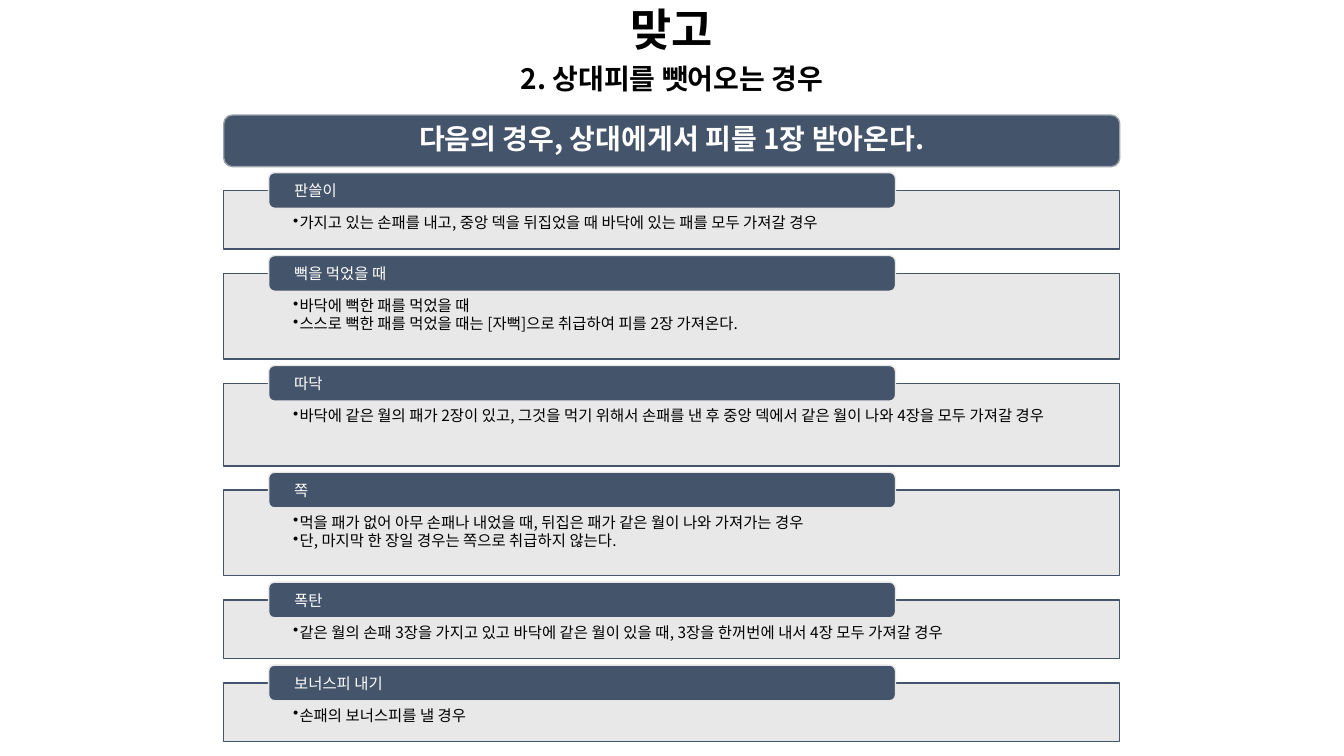
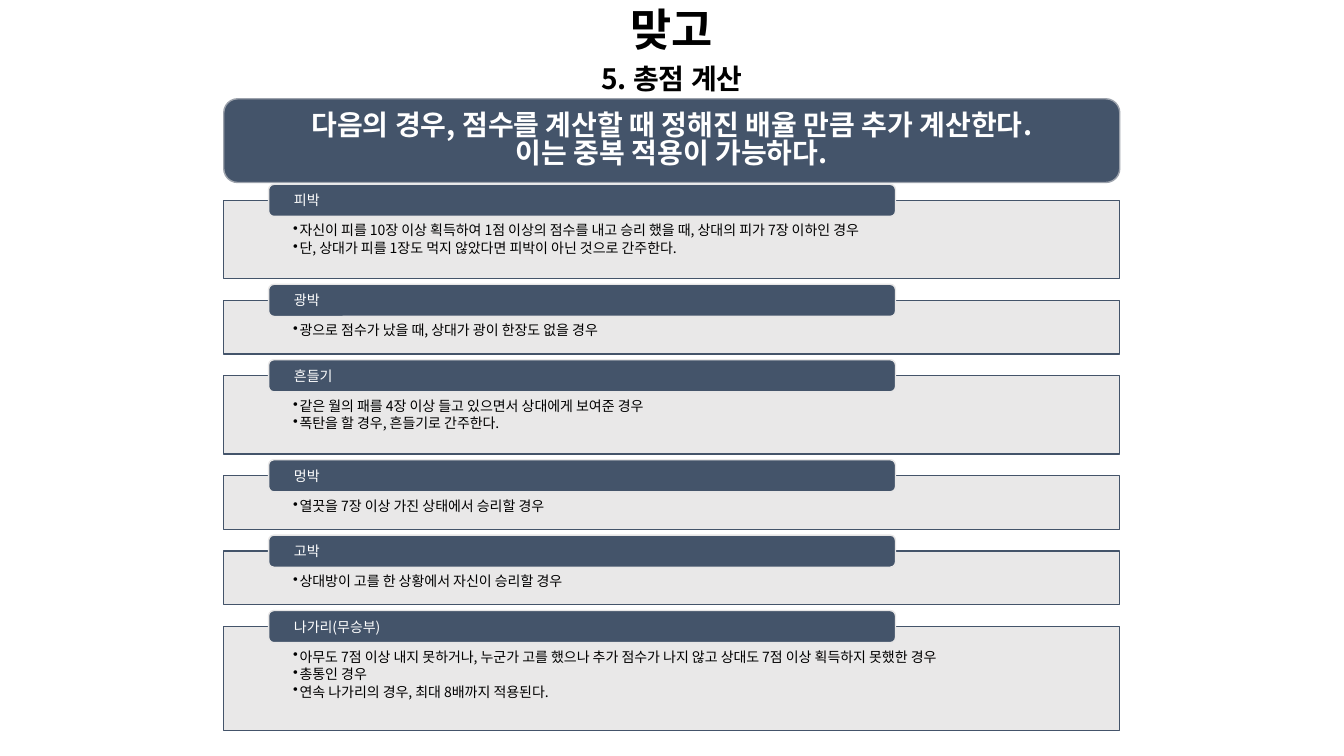
from dataclasses import dataclass

from lxml import etree
from pptx import Presentation
from pptx import util as u
from pptx.dml.color import RGBColor
from pptx.enum import shapes, text
from pptx.oxml.ns import qn


@dataclass(frozen=True)
class Theme:
    font: str = "Noto Sans CJK KR"
    ink: str = "000000"
    white: str = "FFFFFF"
    navy: str = "44546A"
    gray: str = "E7E6E6"
    edge: str = "9CA2AC"
    title: int = 32
    head: int = 20
    wide: float = 33.87
    high: float = 19.05
    left: float = 5.64
    span: float = 22.58
    tab_left: float = 6.77
    tab_span: float = 15.8


T = Theme()
RECT = shapes.MSO_SHAPE.RECTANGLE
ROUND = shapes.MSO_SHAPE.ROUNDED_RECTANGLE

SLIDES = [
    dict(
        sub="2. 상대피를 뺏어오는 경우",
        note=["다음의 경우, 상대에게서 피를 1장 받아온다."],
        note_box=(2.9, 1.3),
        top=4.8, gap=0.61, tab=0.9, size=11, lead=12, after=1, inset=0.62,
        rules=[
            ("판쓸이", 1.48, ["가지고 있는 손패를 내고, 중앙 덱을 뒤집었을 때 바닥에 있는 패를 모두 가져갈 경우"]),
            ("뻑을 먹었을 때", 2.16, [
                "바닥에 뻑한 패를 먹었을 때",
                "스스로 뻑한 패를 먹었을 때는 [자뻑]으로 취급하여 피를 2장 가져온다."]),
            ("따닥", 2.08, [
                "바닥에 같은 월의 패가 2장이 있고, 그것을 먹기 위해서 손패를 낸 후 "
                "중앙 덱에서 같은 월이 나와 4장을 모두 가져갈 경우"]),
            ("쪽", 2.16, [
                "먹을 패가 없어 아무 손패나 내었을 때, 뒤집은 패가 같은 월이 나와 가져가는 경우",
                "단, 마지막 한 장일 경우는 쪽으로 취급하지 않는다."]),
            ("폭탄", 1.48, [
                "같은 월의 손패 3장을 가지고 있고 바닥에 같은 월이 있을 때, "
                "3장을 한꺼번에 내서 4장 모두 가져갈 경우"]),
            ("보너스피 내기", 1.48, ["손패의 보너스피를 낼 경우"]),
        ],
    ),
    dict(
        sub="5. 총점 계산",
        note=["다음의 경우, 점수를 계산할 때 정해진 배율 만큼 추가 계산한다.",
              "이는 중복 적용이 가능하다."],
        note_box=(2.49, 2.11),
        top=5.05, gap=0.55, tab=0.81, size=10, lead=11, after=1.5, inset=0.58,
        rules=[
            ("피박", 1.97, [
                "자신이 피를 10장 이상 획득하여 1점 이상의 점수를 내고 승리 했을 때, "
                "상대의 피가 7장 이하인 경우",
                "단, 상대가 피를 1장도 먹지 않았다면 피박이 아닌 것으로 간주한다."]),
            ("광박", 1.35, ["광으로 점수가 났을 때, 상대가 광이 한장도 없을 경우"]),
            ("흔들기", 1.97, [
                "같은 월의 패를 4장 이상 들고 있으면서 상대에게 보여준 경우",
                "폭탄을 할 경우, 흔들기로 간주한다."]),
            ("멍박", 1.35, ["열끗을 7장 이상 가진 상태에서 승리할 경우"]),
            ("고박", 1.35, ["상대방이 고를 한 상황에서 자신이 승리할 경우"]),
            ("나가리(무승부)", 2.62, [
                "아무도 7점 이상 내지 못하거나, 누군가 고를 했으나 추가 점수가 나지 않고 "
                "상대도 7점 이상 획득하지 못했한 경우",
                "총통인 경우",
                "연속 나가리의 경우, 최대 8배까지 적용된다."]),
        ],
    ),
]


def rgb(tint):
    return RGBColor.from_string(tint)


def mark(para, bullet):
    props = para._p.get_or_add_pPr()
    dent = u.Cm(0.16) if bullet else 0
    props.set("marL", str(dent))
    props.set("indent", str(-dent))
    if bullet:
        etree.SubElement(props, qn("a:buChar"), char="•")
    else:
        etree.SubElement(props, qn("a:buNone"))


def write(shape, lines, size, color=T.ink, bold=False, align="LEFT", anchor="MIDDLE",
          inset=(0, 0, 0, 0), lead=None, after=0, bullet=False):
    frame = shape.text_frame
    frame.word_wrap = True
    frame.auto_size = text.MSO_AUTO_SIZE.NONE
    frame.vertical_anchor = text.MSO_ANCHOR[anchor]
    (frame.margin_left, frame.margin_top,
     frame.margin_right, frame.margin_bottom) = map(u.Cm, inset)
    for i, line in enumerate(lines):
        para = frame.paragraphs[0] if i == 0 else frame.add_paragraph()
        para.alignment = text.PP_ALIGN[align]
        para.space_before = u.Pt(0)
        para.space_after = u.Pt(after)
        if lead:
            para.line_spacing = lead
        mark(para, bullet)
        run = para.add_run()
        run.text = line
        font = run.font
        font.name, font.size, font.bold = T.font, u.Pt(size), bold
        font.color.rgb = rgb(color)
        etree.SubElement(run._r.get_or_add_rPr(), qn("a:ea"), typeface=T.font)


def place(shape, left, top, wide, high):
    shape.left, shape.top = u.Cm(left), u.Cm(top)
    shape.width, shape.height = u.Cm(wide), u.Cm(high)


def box(slide, kind, area, fill, line, alpha=None):
    shape = slide.shapes.add_shape(kind, *map(u.Cm, area))
    shape.shadow.inherit = False
    shape.fill.solid()
    shape.fill.fore_color.rgb = rgb(fill)
    shape.line.color.rgb = rgb(line)
    shape.line.width = u.Pt(1)
    if alpha:
        tint = shape._element.spPr.find(qn("a:solidFill"))[0]
        etree.SubElement(tint, qn("a:alpha"), val=str(alpha * 1000))
    return shape


def heads(slide, sub):
    title, body = slide.shapes.title, slide.placeholders[1]
    place(title, 0, 0, T.wide, 1.45)
    place(body, 0, 1.45, T.wide, 1.04)
    write(title, ["맞고"], T.title, bold=True, align="CENTER")
    write(body, [sub], T.head, bold=True, align="CENTER")


def rule(slide, page, top, name, high, lines):
    panel = box(slide, RECT, (T.left, top, T.span, high), T.gray, T.navy, alpha=90)
    write(panel, lines, page["size"], anchor="TOP", bullet=True,
          inset=(1.75, page["inset"], 1.7, 0.2),
          lead=u.Pt(page["lead"]), after=page["after"])
    tab = box(slide, ROUND, (T.tab_left, top - page["tab"] / 2, T.tab_span, page["tab"]),
              T.navy, T.gray)
    write(tab, [name], page["size"], color=T.white, inset=(0.6, 0, 0.6, 0))


def build(slide, page):
    heads(slide, page["sub"])
    top = page["top"]
    for name, high, lines in page["rules"]:
        rule(slide, page, top, name, high, lines)
        top += high + page["gap"]
    y, high = page["note_box"]
    note = box(slide, ROUND, (T.left, y, T.span, high), T.navy, T.edge)
    write(note, page["note"], T.head, color=T.white, bold=True, align="CENTER", lead=0.84)


def main():
    deck = Presentation()
    deck.slide_width, deck.slide_height = u.Cm(T.wide), u.Cm(T.high)
    for page in SLIDES:
        build(deck.slides.add_slide(deck.slide_layouts[1]), page)
    deck.save("out.pptx")


if __name__ == "__main__":
    main()
